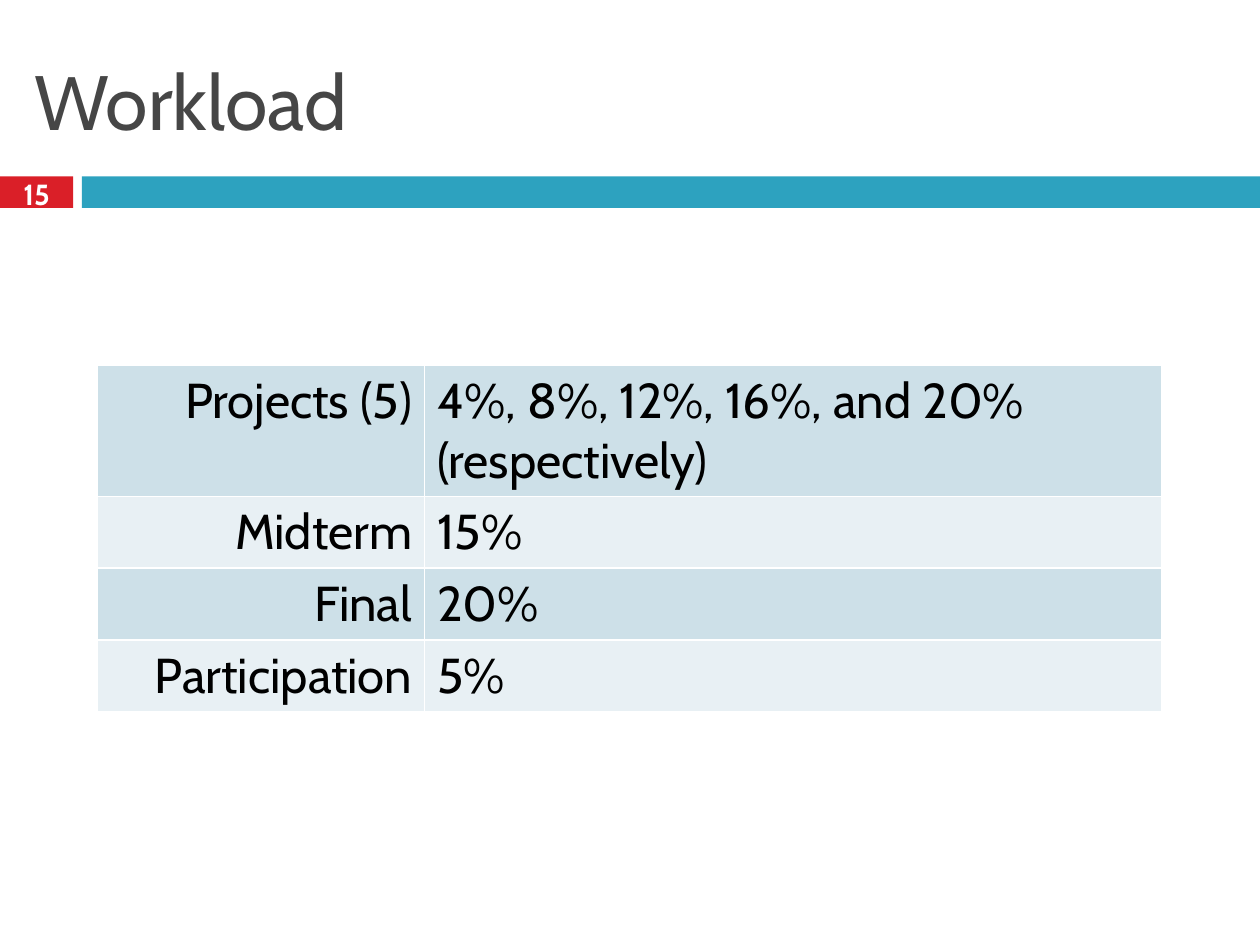
import pptx
import pptx.dml.color
import pptx.enum.shapes
import pptx.enum.text
import pptx.oxml
import pptx.oxml.ns
import pptx.util
from dataclasses import dataclass

Inches = pptx.util.Inches
Align = pptx.enum.text.PP_ALIGN
Anchor = pptx.enum.text.MSO_ANCHOR

TITLE = "Workload"
PAGE_NUMBER = "15"
WORKLOAD = [
    ("Projects (5)", "4%, 8%, 12%, 16%, and 20% (respectively)"),
    ("Midterm", "15%"),
    ("Final", "20%"),
    ("Participation", "5%"),
]
COLUMN_WIDTHS = (2.6, 5.85)
ROW_HEIGHTS = (1.04, 0.57, 0.57, 0.57)
COLUMN_ALIGNMENTS = (Align.RIGHT, Align.LEFT)


@dataclass(frozen=True)
class Theme:
    font: str = "Cabin"
    title: str = "464646"
    text: str = "000000"
    white: str = "FFFFFF"
    red: str = "DA1F28"
    teal: str = "2DA2BF"
    bands: tuple = ("CDE0E8", "E8F0F4")
    title_size: float = 44
    number_size: float = 16.6
    table_size: float = 28


THEME = Theme()


def rgb(color):
    return pptx.dml.color.RGBColor.from_string(color)


def write(text_frame, text, size, color, alignment=Align.LEFT, bold=False):
    paragraph = text_frame.paragraphs[0]
    paragraph.alignment = alignment
    run = paragraph.add_run()
    run.text = text
    run.font.name = THEME.font
    run.font.size = pptx.util.Pt(size)
    run.font.bold = bold
    run.font.color.rgb = rgb(color)


def add_bar(slide, left, width, color):
    bar = slide.shapes.add_shape(
        pptx.enum.shapes.MSO_SHAPE.RECTANGLE,
        Inches(left), Inches(1.4), Inches(width), Inches(0.25))
    bar.shadow.inherit = False
    bar.fill.solid()
    bar.fill.fore_color.rgb = rgb(color)
    bar.line.fill.background()


def set_borders(cell, color, points):
    """Draw all four cell edges; they must come before the fill in the XML."""
    properties = cell._tc.get_or_add_tcPr()
    for index, edge in enumerate(("lnL", "lnR", "lnT", "lnB")):
        properties.insert(index, pptx.oxml.parse_xml(
            f'<a:{edge} {pptx.oxml.ns.nsdecls("a")} w="{pptx.util.Pt(points)}">'
            f'<a:solidFill><a:srgbClr val="{color}"/></a:solidFill></a:{edge}>'))


def add_title(slide):
    title = slide.shapes.title
    title.left, title.top = Inches(0.17), Inches(0.25)
    title.width, title.height = Inches(9.67), Inches(1.08)
    title.text_frame.vertical_anchor = Anchor.MIDDLE
    write(title.text_frame, TITLE, THEME.title_size, THEME.title)


def add_page_number(slide):
    box = slide.shapes.add_textbox(Inches(0), Inches(1.37), Inches(0.58), Inches(0.33))
    frame = box.text_frame
    frame.word_wrap = True
    frame.vertical_anchor = Anchor.MIDDLE
    frame.margin_left = frame.margin_right = frame.margin_top = frame.margin_bottom = 0
    write(frame, PAGE_NUMBER, THEME.number_size, THEME.white, Align.CENTER, bold=True)


def add_workload_table(slide):
    table = slide.shapes.add_table(
        len(WORKLOAD), len(COLUMN_WIDTHS), Inches(0.77), Inches(2.9),
        Inches(sum(COLUMN_WIDTHS)), Inches(sum(ROW_HEIGHTS))).table
    table.first_row = False
    for column, width in zip(table.columns, COLUMN_WIDTHS):
        column.width = Inches(width)
    for row_index, (row, height) in enumerate(zip(table.rows, ROW_HEIGHTS)):
        row.height = Inches(height)
        band = THEME.bands[row_index % len(THEME.bands)]
        for cell, text, alignment in zip(row.cells, WORKLOAD[row_index], COLUMN_ALIGNMENTS):
            cell.fill.solid()
            cell.fill.fore_color.rgb = rgb(band)
            set_borders(cell, THEME.white, 1)
            write(cell.text_frame, text, THEME.table_size, THEME.text, alignment)


def main():
    presentation = pptx.Presentation()
    presentation.slide_width, presentation.slide_height = Inches(10), Inches(7.5)
    slide = presentation.slides.add_slide(presentation.slide_layouts[5])
    add_bar(slide, 0, 0.58, THEME.red)
    add_bar(slide, 0.65, 9.35, THEME.teal)
    add_title(slide)
    add_page_number(slide)
    add_workload_table(slide)
    presentation.save("out.pptx")


if __name__ == "__main__":
    main()
